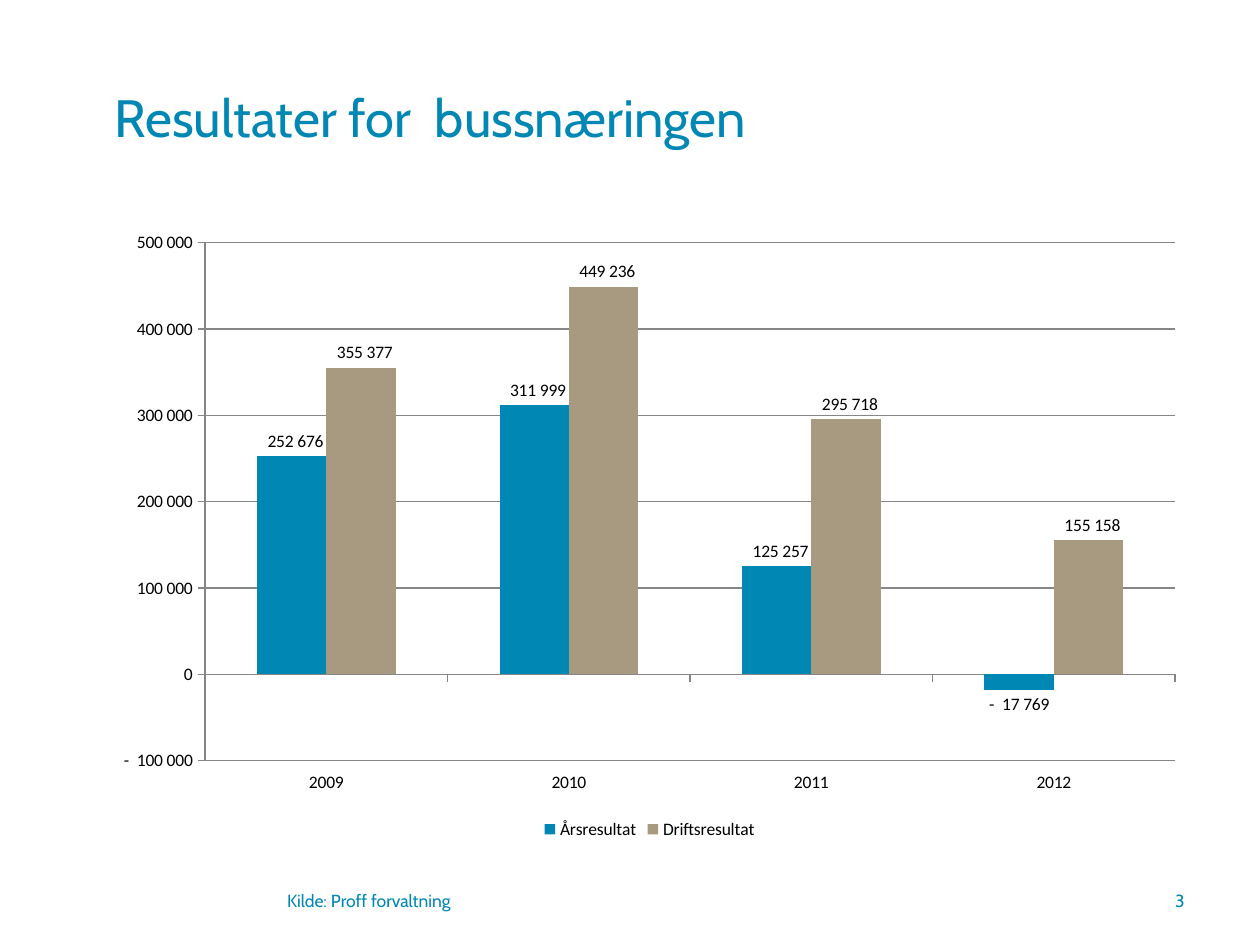
from pptx import Presentation
from pptx.chart.data import CategoryChartData
from pptx.dml.color import RGBColor
from pptx.enum.chart import (XL_CHART_TYPE, XL_LABEL_POSITION as LabelPos,
                             XL_LEGEND_POSITION as LegendPos,
                             XL_TICK_LABEL_POSITION as TickLabelPos,
                             XL_TICK_MARK as TickMark)
from pptx.enum.text import MSO_ANCHOR, PP_ALIGN
from pptx.util import Inches, Pt

COLORS = {"blue": "0087B3", "sand": "A89A80", "text": "000000", "line": "868686"}
NUMBER_FORMAT = r"###\ ###\ ###\ ##0"
LEFT, RIGHT = 0.81, 9.5
WIDTH = RIGHT - LEFT
YEARS = ["2009", "2010", "2011", "2012"]
RESULTS = [
    ("Årsresultat", (252676, 311999, 125257, -17769), "blue"),
    ("Driftsresultat", (355377, 449236, 295718, 155158), "sand"),
]


def rgb(name):
    """Return the named palette colour."""
    return RGBColor.from_string(COLORS[name])


def style_font(font, size, color, name):
    """Set size, colour and typeface of a font."""
    font.size, font.name = Pt(size), name
    font.color.rgb = rgb(color)


def fill_text(s, text, size, align=PP_ALIGN.LEFT):
    """Write one middle-anchored blue paragraph into a shape."""
    tf = s.text_frame
    tf.word_wrap = True
    tf.vertical_anchor = MSO_ANCHOR.MIDDLE
    tf.text = text
    p = tf.paragraphs[0]
    p.alignment = align
    style_font(p.runs[0].font, size, "blue", "Cabin")


def add_title(slide, box, text):
    """Place and format the title placeholder."""
    s = slide.shapes.title
    s.left, s.top, s.width, s.height = map(Inches, box)
    fill_text(s, text, 30)


def add_footer(slide, box, source, number):
    """Place the source note and the slide number along a footer band."""
    left, top, width, height = box
    source_width, number_width = 3.41, 0.67
    parts = [
        (left, source_width, source, PP_ALIGN.LEFT),
        (left + width - number_width, number_width, number, PP_ALIGN.RIGHT),
    ]
    for x, w, text, align in parts:
        s = slide.shapes.add_textbox(*map(Inches, (x, top, w, height)))
        fill_text(s, text, 10, align)


def add_results_chart(slide, box):
    """Add the clustered columns of yearly results."""
    data = CategoryChartData(number_format=NUMBER_FORMAT)
    data.categories = YEARS
    for name, values, _ in RESULTS:
        data.add_series(name, values)
    chart = slide.shapes.add_chart(
        XL_CHART_TYPE.COLUMN_CLUSTERED, *map(Inches, box), data).chart
    chart.has_title = False
    style_font(chart.font, 10, "text", "Calibri")
    chart.has_legend = True
    chart.legend.position = LegendPos.BOTTOM
    chart.legend.include_in_layout = False

    plot = chart.plots[0]
    plot.gap_width, plot.overlap = 150, 0
    plot.vary_by_categories = False
    for series, (_, _, color) in zip(plot.series, RESULTS):
        series.invert_if_negative = False
        series.format.fill.solid()
        series.format.fill.fore_color.rgb = rgb(color)
        labels = series.data_labels
        labels.show_value = True
        labels.position = LabelPos.OUTSIDE_END
        labels.number_format = NUMBER_FORMAT
        labels.number_format_is_linked = False
        style_font(labels.font, 10, "text", "Calibri")

    cat_axis, val_axis = chart.category_axis, chart.value_axis
    cat_axis.tick_label_position = TickLabelPos.LOW
    val_axis.minimum_scale, val_axis.maximum_scale = -100000, 500000
    val_axis.major_unit = 100000
    val_axis.has_major_gridlines = True
    val_axis.tick_labels.number_format = NUMBER_FORMAT
    val_axis.tick_labels.number_format_is_linked = False
    for axis in (cat_axis, val_axis):
        axis.major_tick_mark = TickMark.OUTSIDE
    for part in (cat_axis, val_axis, val_axis.major_gridlines):
        part.format.line.color.rgb = rgb("line")
        part.format.line.width = Pt(0.75)


def main():
    """Build and save the results slide."""
    prs = Presentation()
    prs.slide_width, prs.slide_height = Inches(10), Inches(7.5)
    slide = prs.slides.add_slide(prs.slide_layouts[5])
    add_title(slide, (LEFT, 0.3, WIDTH, 1.25), "Resultater for  bussnæringen")
    add_results_chart(slide, (LEFT, 1.75, WIDTH, 4.95))
    add_footer(slide, (2.18, 6.95, RIGHT - 2.18, 0.4),
               "Kilde: Proff forvaltning", "3")
    prs.save("out.pptx")


if __name__ == "__main__":
    main()
